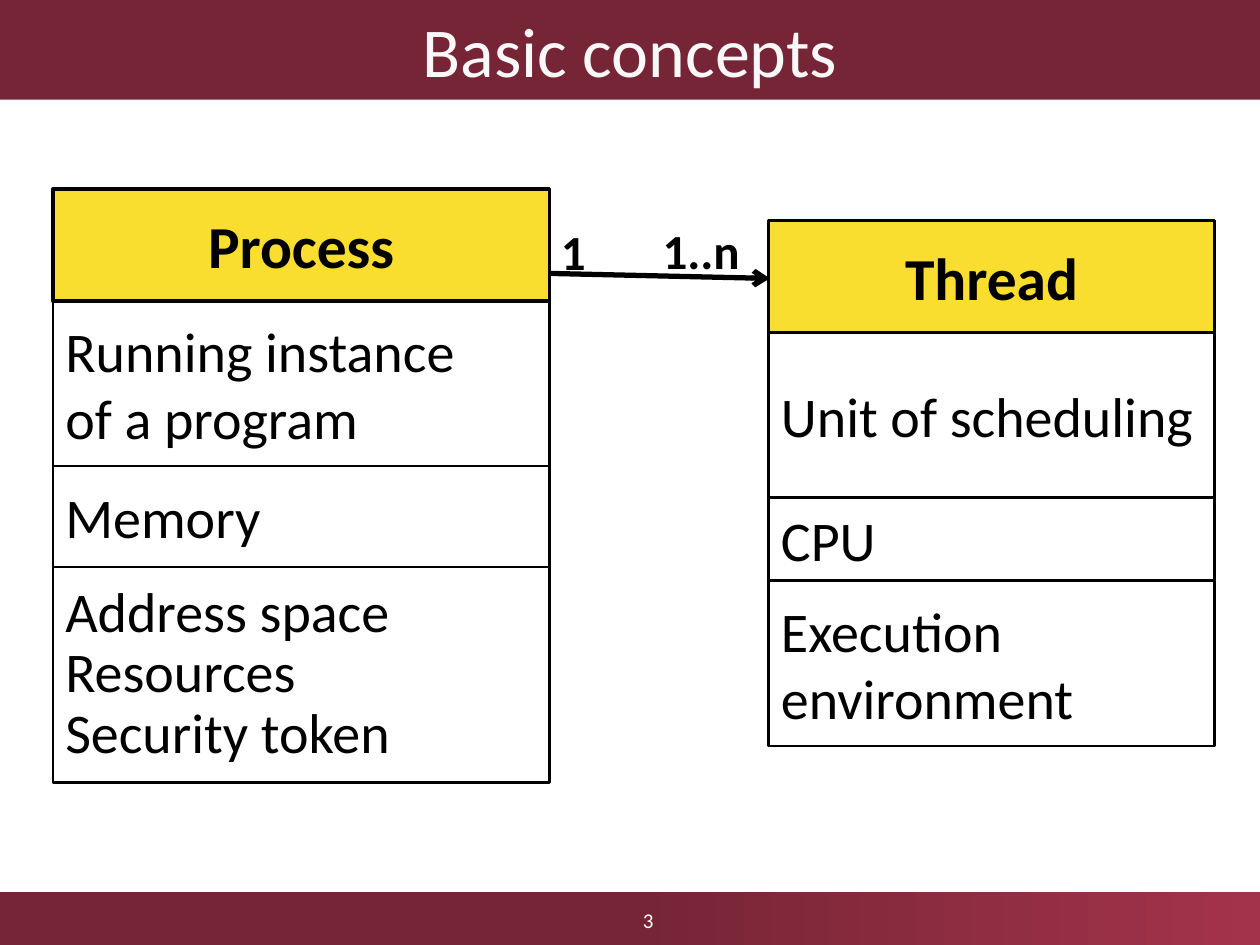
from lxml.etree import SubElement
from pptx import Presentation
from pptx.dml.color import RGBColor
from pptx.enum.shapes import MSO_CONNECTOR, MSO_SHAPE
from pptx.enum.text import MSO_ANCHOR, MSO_AUTO_SIZE, PP_ALIGN
from pptx.oxml.ns import qn
from pptx.util import Inches, Pt

COLORS = {"maroon": "762536", "rose": "A3334B", "yellow": "F9DD2F",
          "black": "000000", "white": "FFFFFF", "title": "F8F8F8"}
FONT = "Calibri"
SLIDE_W, SLIDE_H = 10, 7.5
FOOTER_H = 0.42

TITLE = "Basic concepts"
PAGE_NUMBER = "3"
# Each row: paragraphs (a newline is a line break), height, line spacing
ENTITIES = [
    {"name": "Process", "at": (0.42, 1.5), "width": 3.94, "rows": [
        (["Running instance \nof a program"], 1.31, None),
        (["Memory"], 0.8, None),
        (["Address space", "Resources", "Security token"], 1.71, 0.9)]},
    {"name": "Thread", "at": (6.1, 1.75), "width": 3.54, "rows": [
        (["Unit of scheduling"], 1.31, None),
        (["CPU"], 0.66, None),
        (["Execution environment"], 1.31, None)]},
]
HEADER_H = 0.89
MULTIPLICITIES = [("1", (4.35, 1.71, 0.4, 0.57)), ("1..n", (5.06, 1.7, 1.01, 0.57))]
ASSOCIATION = ((4.35, 2.17), (6.11, 2.21))


def rgb(name):
    return RGBColor.from_string(COLORS[name])


def inches(values):
    return [Inches(value) for value in values]


def write(shape, paragraphs, size, color="black", bold=False, align=PP_ALIGN.CENTER,
          anchor=MSO_ANCHOR.MIDDLE, spacing=None):
    frame = shape.text_frame
    frame.word_wrap = True
    frame.auto_size = MSO_AUTO_SIZE.NONE
    frame.vertical_anchor = anchor
    for i, text in enumerate(paragraphs):
        paragraph = frame.add_paragraph() if i else frame.paragraphs[0]
        paragraph.alignment = align
        if spacing:
            paragraph.line_spacing = spacing
        for j, line in enumerate(text.split("\n")):
            if j:
                paragraph.add_line_break()
            run = paragraph.add_run()
            run.text = line
            run.font.name, run.font.size, run.font.bold = FONT, Pt(size), bold
            run.font.color.rgb = rgb(color)


def add_cell(slide, box, line_width, fill=None):
    cell = slide.shapes.add_shape(MSO_SHAPE.RECTANGLE, *inches(box))
    cell.shadow.inherit = False
    if fill:
        cell.fill.solid()
        cell.fill.fore_color.rgb = rgb(fill)
    else:
        cell.fill.background()
    cell.line.color.rgb = rgb("black")
    cell.line.width = Pt(line_width)
    return cell


def add_entity(slide, entity):
    """Stack the rows of one class box below its yellow header."""
    left, top = entity["at"]
    width = entity["width"]
    y = top + HEADER_H
    for paragraphs, height, spacing in entity["rows"]:
        row = add_cell(slide, (left, y, width, height), 1.5)
        write(row, paragraphs, 32, align=PP_ALIGN.LEFT, spacing=spacing)
        y += height
    header = add_cell(slide, (left, top, width, HEADER_H), 2, "yellow")
    write(header, [entity["name"]], 34, bold=True)


def add_association(slide, start, end):
    arrow = slide.shapes.add_connector(MSO_CONNECTOR.STRAIGHT, *inches(start + end))
    arrow.line.color.rgb = rgb("black")
    arrow.line.width = Pt(3)
    SubElement(arrow.line._get_or_add_ln(), qn("a:tailEnd"), type="arrow")
    SubElement(arrow._element.spPr, qn("a:effectLst"))


def add_footer(slide):
    top = SLIDE_H - FOOTER_H
    band = slide.shapes.add_shape(MSO_SHAPE.RECTANGLE, *inches((0, top, SLIDE_W, FOOTER_H)))
    band.shadow.inherit = False
    band.line.fill.background()
    band.fill.gradient()
    band.fill.gradient_angle = 0
    for stop, position, color in zip(band.fill.gradient_stops, (0.5, 1), ("maroon", "rose")):
        stop.position = position
        stop.color.rgb = rgb(color)
    number = slide.shapes.add_textbox(*inches((3.52, 7.11, 3.25, 0.39)))
    write(number, [PAGE_NUMBER], 12, "white")


def main():
    deck = Presentation()
    deck.slide_width, deck.slide_height = inches((SLIDE_W, SLIDE_H))
    slide = deck.slides.add_slide(deck.slide_layouts[5])

    title = slide.shapes.title
    title.left, title.top, title.width, title.height = inches((0, 0, SLIDE_W, 0.79))
    title.fill.solid()
    title.fill.fore_color.rgb = rgb("maroon")
    write(title, [TITLE], 40, "title")

    add_footer(slide)
    for entity in ENTITIES:
        add_entity(slide, entity)
    add_association(slide, *ASSOCIATION)
    for label, box in MULTIPLICITIES:
        write(slide.shapes.add_textbox(*inches(box)), [label], 28, bold=True,
              anchor=MSO_ANCHOR.TOP)
    deck.save("out.pptx")


if __name__ == "__main__":
    main()
